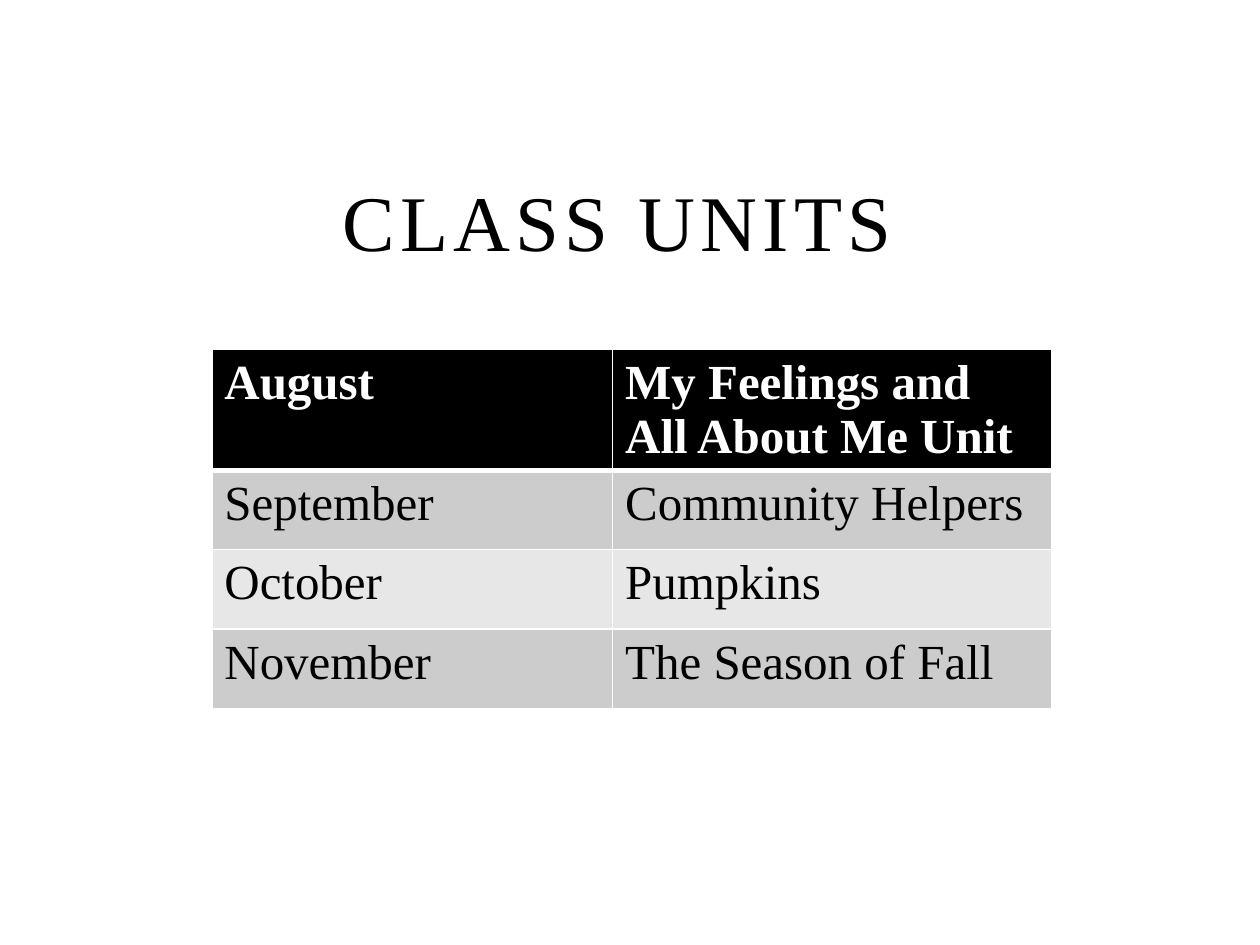
"""Build the class units slide with a title and a month-by-month table."""
from lxml import etree
from pptx import Presentation
from pptx import util as u
from pptx.dml.color import RGBColor
from pptx.enum import text
from pptx.oxml import ns

FONT = "Times New Roman"
COLORS = {"ink": "000000", "paper": "FFFFFF", "dark_band": "CCCCCC", "light_band": "E7E7E7"}
UNITS = [
    ("August", "My Feelings and All About Me Unit"),
    ("September", "Community Helpers"),
    ("October", "Pumpkins"),
    ("November", "The Season of Fall"),
]
COLUMN_WIDTHS = (8.08, 8.86)
ROW_HEIGHT = 1.6


def color(key):
    """Return the named palette colour."""
    return RGBColor.from_string(COLORS[key])


def style_font(font, size, key, bold=False):
    """Set typeface, size, colour and weight."""
    font.name = FONT
    font.size = u.Pt(size)
    font.bold = bold
    font.color.rgb = color(key)


def add_title(slide, wording):
    """Place and format the letter-spaced title."""
    title = slide.shapes.title
    title.left, title.top = u.Cm(3.81), u.Cm(3.61)
    title.width, title.height = u.Cm(17.78), u.Cm(1.9)
    frame = title.text_frame
    frame.text = wording
    frame.auto_size = text.MSO_AUTO_SIZE.NONE
    frame.vertical_anchor = text.MSO_ANCHOR.BOTTOM
    heading = frame.paragraphs[0]
    heading.alignment = text.PP_ALIGN.CENTER
    run = heading.runs[0]
    style_font(run.font, 45, "ink")
    run.font._element.set("spc", "300")


def set_border(cell, side, points):
    """Draw one white cell border."""
    properties = cell._tc.get_or_add_tcPr()
    border = etree.SubElement(properties, ns.qn(f"a:ln{side}"), w=str(u.Pt(points)))
    fill = etree.SubElement(border, ns.qn("a:solidFill"))
    etree.SubElement(fill, ns.qn("a:srgbClr"), val=COLORS["paper"])


def format_cell(cell, wording, row):
    """Fill a cell and set its borders and text for its row."""
    is_header = row == 0
    cell.text = wording
    style_font(cell.text_frame.paragraphs[0].runs[0].font, 28,
               "paper" if is_header else "ink", is_header)
    for side in "LRTB":
        under_header = (row, side) in ((0, "B"), (1, "T"))
        set_border(cell, side, 3 if under_header else 1)
    band = "dark_band" if row % 2 else "light_band"
    cell.fill.solid()
    cell.fill.fore_color.rgb = color("ink" if is_header else band)


def add_units_table(slide):
    """Add the table of months and their units."""
    table = slide.shapes.add_table(
        len(UNITS), len(COLUMN_WIDTHS), u.Cm(4.27), u.Cm(7.04),
        u.Cm(sum(COLUMN_WIDTHS)), u.Cm(ROW_HEIGHT * len(UNITS))).table
    for column, width in zip(table.columns, COLUMN_WIDTHS):
        column.width = u.Cm(width)
    for row, unit in enumerate(UNITS):
        for column, wording in enumerate(unit):
            format_cell(table.cell(row, column), wording, row)


def main():
    """Build and save the slide."""
    deck = Presentation()
    deck.slide_width, deck.slide_height = u.Cm(25.4), u.Cm(19.05)
    slide = deck.slides.add_slide(deck.slide_layouts.get_by_name("Title Only"))
    add_title(slide, "CLASS UNITS ")
    add_units_table(slide)
    deck.save("out.pptx")


if __name__ == "__main__":
    main()
